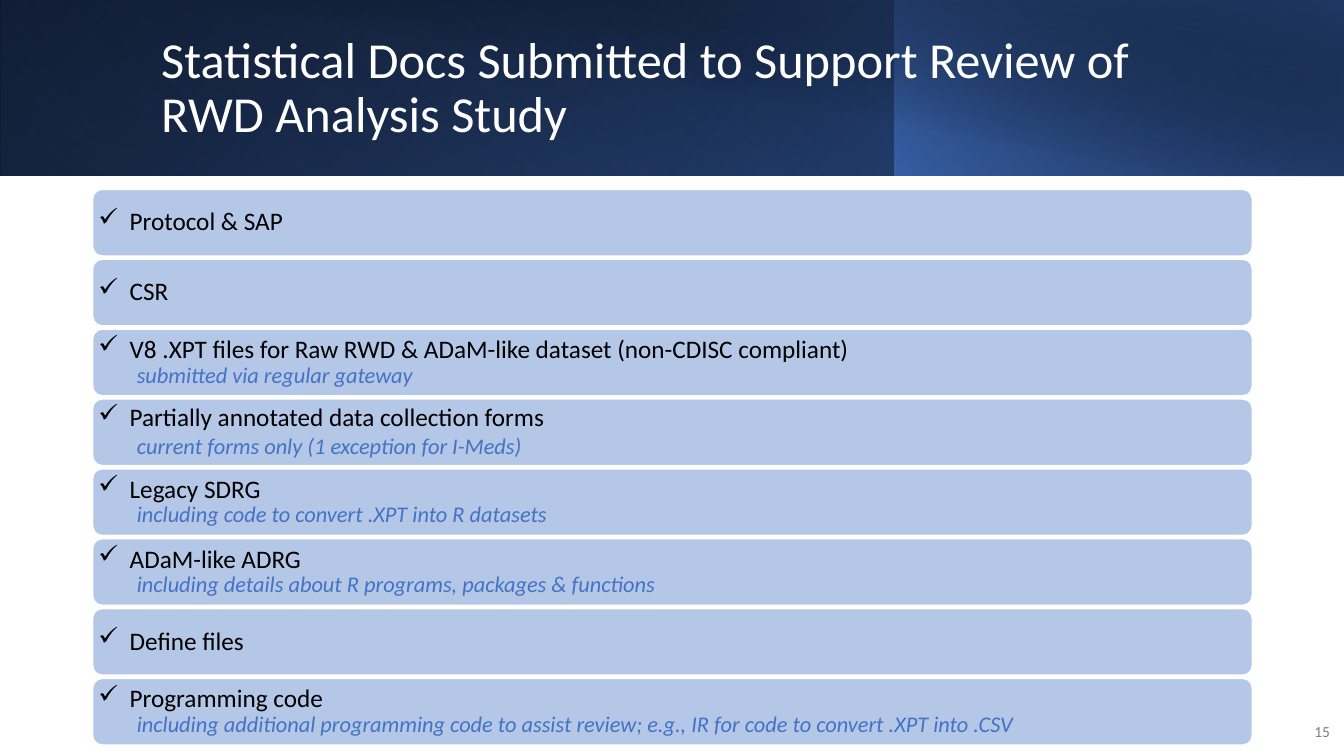
import pptx
import pptx.util
import pptx.oxml
import pptx.oxml.ns
import pptx.dml.color
import pptx.enum.shapes
import pptx.enum.text

Inches = pptx.util.Inches
Pt = pptx.util.Pt
Kind = pptx.enum.shapes.MSO_SHAPE
Align = pptx.enum.text.PP_ALIGN
Anchor = pptx.enum.text.MSO_ANCHOR

HEAD = "Statistical Docs Submitted to Support Review of RWD Analysis Study"
PAGE = "15"
DOCS = [
    ("Protocol & SAP", "", 0),
    ("CSR", "", 0),
    ("V8 .XPT files for Raw RWD & ADaM-like dataset (non-CDISC compliant)",
     "submitted via regular gateway", 0),
    ("Partially annotated data collection forms",
     "current forms only (1 exception for I-Meds)", 2),
    ("Legacy SDRG", "including code to convert .XPT into R datasets", 0),
    ("ADaM-like ADRG",
     "including details about R programs, packages & functions", 0),
    ("Define files", "", 0),
    ("Programming code",
     "including additional programming code to assist review; "
     "e.g., IR for code to convert .XPT into .CSV", 0),
]
HUES = {"white": "FFFFFF", "black": "000000", "bar": "B4C7E7",
        "blue": "4472C4", "deep": "2F5597", "navy": "203864", "gray": "808080"}
BANDS = [
    {"box": (0, 0, 13.33, 1.74), "flip": True, "turn": 0, "ang": 140,
     "stops": [(0, "black", 100), (100, "deep", 100)]},
    {"box": (0, 0, 8.88, 1.74), "flip": True, "turn": 180, "ang": 230,
     "stops": [(20, "blue", 0), (100, "navy", 55)]},
    {"box": (8.87, 0, 4.46, 1.74), "flip": True, "turn": 0, "ang": 220,
     "stops": [(0, "blue", 66), (100, "black", 30)]},
    {"box": (0.5, 0, 12.83, 1.75), "flip": False, "turn": 0, "ang": 280,
     "stops": [(50, "black", 0), (99, "navy", 52)]},
]
LEFT, TOP, WIDE, HIGH, STEP = 0.92, 1.88, 11.5, 0.66, 0.693
FONTS = {
    "head": {"size": Pt(36), "name": "Calibri"},
    "page": {"size": Pt(11), "name": "Calibri"},
    "main": {"size": Pt(18), "name": "Calibri"},
    "sub": {"size": Pt(16), "name": "Calibri", "italic": True},
}
INSET = Inches(0.03)
FRAME = {"word_wrap": True, "vertical_anchor": Anchor.MIDDLE}
TIGHT = {"margin_left": INSET, "margin_right": INSET,
         "margin_top": INSET, "margin_bottom": INSET}


def apply(item, form):
    for key, val in form.items():
        setattr(item, key, val)


def color(name):
    return pptx.dml.color.RGBColor.from_string(HUES[name])


def write(para, text, font, hue, form):
    apply(para, form)
    run = para.add_run()
    run.text = text
    apply(run.font, FONTS[font])
    run.font.color.rgb = color(hue)


def indent(para, left, hang=0, mark=""):
    props = para._p.get_or_add_pPr()
    props.set("marL", str(Inches(left)))
    props.set("indent", str(Inches(hang)))
    if mark:
        bullet = pptx.oxml.ns.qn("a:buChar")
        props.append(props.makeelement(bullet, {"char": mark}))


def shape(slide, kind, box):
    item = slide.shapes.add_shape(kind, *map(Inches, box))
    item.shadow.inherit = False
    return item


def band(slide, info):
    item = shape(slide, Kind.RECTANGLE, info["box"])
    item.line.fill.background()
    item.rotation = info["turn"]
    props = item._element.spPr
    if info["flip"]:
        props.xfrm.set("flipH", "1")
    stops = "".join(
        f'<a:gs pos="{pos * 1000}"><a:srgbClr val="{HUES[hue]}">'
        f'<a:alpha val="{alpha * 1000}"/></a:srgbClr></a:gs>'
        for pos, hue, alpha in info["stops"])
    fill = pptx.oxml.parse_xml(
        f'<a:gradFill {pptx.oxml.ns.nsdecls("a")} rotWithShape="1">'
        f'<a:gsLst>{stops}</a:gsLst>'
        f'<a:lin ang="{info["ang"] * 60000}" scaled="0"/></a:gradFill>')
    props.find(pptx.oxml.ns.qn("a:prstGeom")).addnext(fill)


def label(slide, box, text, font, hue, form):
    frame = slide.shapes.add_textbox(*map(Inches, box)).text_frame
    apply(frame, FRAME)
    write(frame.paragraphs[0], text, font, hue, form)


def bar(slide, row, main, sub, gap):
    item = shape(slide, Kind.ROUNDED_RECTANGLE,
                 (LEFT, TOP + row * STEP, WIDE, HIGH))
    item.adjustments[0] = 0.14
    item.fill.solid()
    item.fill.fore_color.rgb = color("bar")
    item.line.color.rgb = color("white")
    item.line.width = Pt(1)
    frame = item.text_frame
    apply(frame, FRAME | TIGHT)
    form = {"alignment": Align.LEFT, "line_spacing": 0.9}
    para = frame.paragraphs[0]
    write(para, main, "main", "black", form | {"space_after": Pt(gap)})
    indent(para, 0.31, -0.31, "✓")
    if sub:
        para = frame.add_paragraph()
        write(para, sub, "sub", "blue", form)
        indent(para, 0.38)


def main():
    deck = pptx.Presentation()
    apply(deck, {"slide_width": Inches(13.33), "slide_height": Inches(7.5)})
    slide = deck.slides.add_slide(deck.slide_layouts[6])
    for info in BANDS:
        band(slide, info)
    label(slide, (1.5, 0.32, 10.82, 1.13), HEAD, "head", "white",
          {"line_spacing": 0.9})
    label(slide, (12.8, 7.06, 0.49, 0.4), PAGE, "page", "gray",
          {"alignment": Align.RIGHT, "space_after": Pt(6)})
    for row, doc in enumerate(DOCS):
        bar(slide, row, *doc)
    deck.save("out.pptx")


if __name__ == "__main__":
    main()
